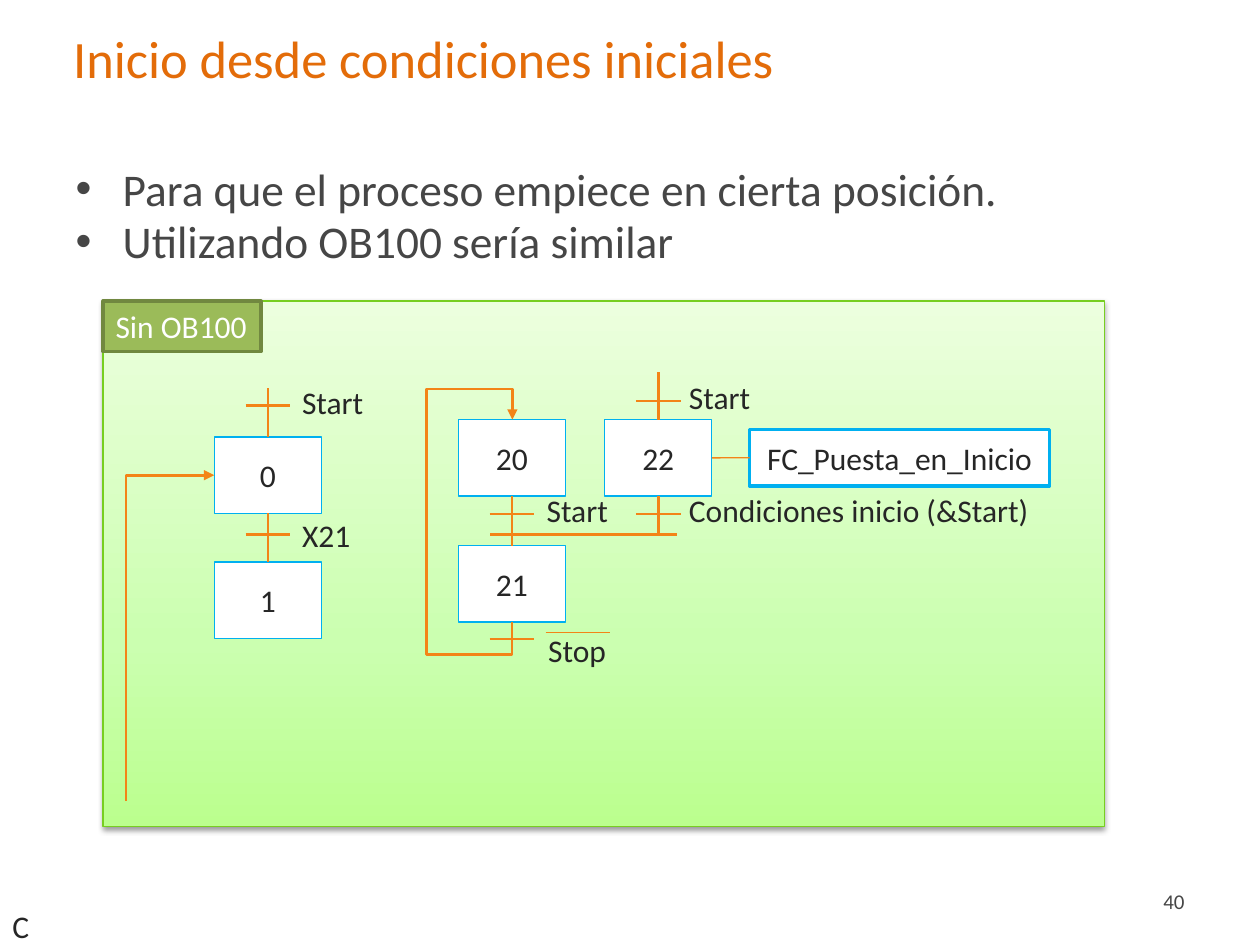
"""Build the slide on starting a process from its initial conditions."""
from copy import deepcopy

from lxml import etree
from pptx import Presentation, util as u
from pptx.dml.color import RGBColor
from pptx.enum import shapes, text
from pptx.oxml.ns import qn

TITLE = "Inicio desde condiciones iniciales"
ITEMS = ["Para que el proceso empiece en cierta posición.", "Utilizando OB100 sería similar"]
ORANGE, BLUE, DARK, GREY, WHITE = "F38417", "00B0F0", "262626", "464646", "FFFFFF"
GRAD = [(0, "BBFF8E"), (0.35, "CBFFB0"), (1, "ECFFDE")]
COL_A, COL_B, COL_C = 5.4, 10.32, 13.27
STEP_W, STEP_H, TICK = 2.16, 1.54, 0.9
STEPS = {"0": (COL_A, 8.81), "1": (COL_A, 11.33), "20": (COL_B, 8.46),
         "21": (COL_B, 11), "22": (COL_C, 8.46)}
LINKS = [("0", "1"), ("20", "21")]
STUBS = [("0", 0, COL_A, 7.82), ("22", 0, COL_C, 7.49), ("22", 2, COL_C, 10.77)]
TICKS = [(COL_A, 8.18), (COL_A, 10.77), (COL_B, 10.36), (COL_B, 12.88),
         (COL_C, 10.36), (COL_C, 8.08)]
BARS = [(9.88, 10.77, 13.64, 10.77, 1.5), (11, 12.75, 12.3, 12.75, 0.75)]
LABELS = [("Start", 5.84, 7.6, 1.75), ("X21", 5.84, 10.27, 1.5), ("Start", 10.77, 9.78, 1.75),
          ("Condiciones inicio (&Start)", 13.64, 9.78, 8.03), ("Stop", 10.8, 12.6, 1.7),
          ("Start", 13.64, 7.5, 1.75), ("C", 0, 18.16, 0.86)]


def rgb(code):
    """Turn a hex string into a colour."""
    return RGBColor.from_string(code)


def put(obj, vals):
    """Set every attribute named in a dict."""
    for key, val in vals.items():
        setattr(obj, key, val)


def place(obj, *box):
    """Move and size a shape in centimetres."""
    put(obj, dict(zip(("left", "top", "width", "height"), map(u.Cm, box))))


def write(par, words, size=18, color=DARK, align=text.PP_ALIGN.LEFT):
    """Add formatted words to a paragraph."""
    par.alignment = align
    run = par.add_run()
    run.text = words
    put(run.font, {"name": "Calibri", "size": u.Pt(size)})
    run.font.color.rgb = rgb(color)


def rect(slide, box, fill, edge, wide):
    """Draw a plain rectangle."""
    shp = slide.shapes.add_shape(shapes.MSO_SHAPE.RECTANGLE, *map(u.Cm, box))
    shp.shadow.inherit = False
    if fill:
        shp.fill.solid()
        shp.fill.fore_color.rgb = rgb(fill)
    shp.line.color.rgb = rgb(edge)
    shp.line.width = u.Pt(wide)
    return shp


def node(slide, words, box, wide=0.75):
    """Draw a white box with centred words."""
    shp = rect(slide, box, WHITE, BLUE, wide)
    put(shp.text_frame, {"word_wrap": True, "vertical_anchor": text.MSO_ANCHOR.MIDDLE})
    write(shp.text_frame.paragraphs[0], words, align=text.PP_ALIGN.CENTER)
    return shp


def label(slide, words, box, anchor=text.MSO_ANCHOR.TOP, **form):
    """Add a text box of one line."""
    frame = slide.shapes.add_textbox(*map(u.Cm, box)).text_frame
    put(frame, {"word_wrap": False, "vertical_anchor": anchor})
    write(frame.paragraphs[0], words, **form)


def line(slide, x, y, to_x, to_y, wide=1.5, kind=shapes.MSO_CONNECTOR.STRAIGHT):
    """Draw an orange connector without a shadow."""
    con = slide.shapes.add_connector(kind, *map(u.Cm, (x, y, to_x, to_y)))
    con.line.color.rgb = rgb(ORANGE)
    con.line.width = u.Pt(wide)
    etree.SubElement(con._element.spPr, qn("a:effectLst"))
    return con


def elbow(slide, preset, x, y, to_x, to_y, bends=()):
    """Draw a bent arrow that leaves upwards in its own turned frame."""
    con = line(slide, x, y, to_x, to_y, kind=shapes.MSO_CONNECTOR.ELBOW)
    run, rise = y - to_y, to_x - x
    props = con._element.spPr
    frame = props.find(qn("a:xfrm"))
    for key in ("flipV", "flipH"):
        frame.attrib.pop(key, None)
    frame.set("rot", "16200000")
    place(con, (x + to_x - run) / 2, (y + to_y - rise) / 2, run, rise)
    geom = props.find(qn("a:prstGeom"))
    geom.set("prst", preset)
    guides = geom.find(qn("a:avLst"))
    for num, (part, whole) in enumerate(bends, 1):
        etree.SubElement(guides, qn("a:gd"), name=f"adj{num}",
                         fmla=f"val {round(part / whole * 100000)}")
    etree.SubElement(props.find(qn("a:ln")), qn("a:tailEnd"), type="triangle")


def panel(slide):
    """Draw the green panel with its gradient and soft shadow."""
    shp = rect(slide, (2.08, 6.07, 20.19, 10.59), None, "77CE21", 0.75)
    shp.fill.gradient()
    shp.fill.gradient_angle = 90
    props = shp._element.spPr
    stops = props.find(qn("a:gradFill")).find(qn("a:gsLst"))
    stops.append(deepcopy(stops[-1]))
    for stop, (pos, code) in zip(shp.fill.gradient_stops, GRAD):
        stop.position = pos
        stop.color.rgb = rgb(code)
    shade = etree.SubElement(props.find(qn("a:effectLst")), qn("a:outerShdw"),
                             blurRad=str(u.Pt(3.1)), dist=str(u.Pt(1.6)),
                             dir="5400000", rotWithShape="0")
    black = etree.SubElement(shade, qn("a:srgbClr"), val="000000")
    etree.SubElement(black, qn("a:alpha"), val="38000")


def heads(slide):
    """Fill the title and the list."""
    title, body = slide.placeholders
    place(title, 1.22, 0.2, 23.34, 1.9)
    place(body, 1.27, 3.33, 23.29, 2.31)
    for shp in (title, body):
        shp.text_frame.auto_size = text.MSO_AUTO_SIZE.NONE
    title.text_frame.vertical_anchor = text.MSO_ANCHOR.MIDDLE
    write(title.text_frame.paragraphs[0], TITLE, 30, "E36C09")
    frame = body.text_frame
    for num, item in enumerate(ITEMS):
        par = frame.add_paragraph() if num else frame.paragraphs[0]
        props = par._p.get_or_add_pPr()
        put_in = {"marL": u.Cm(0.95), "indent": -u.Cm(0.95)}
        for key, val in put_in.items():
            props.set(key, str(val))
        tint = etree.SubElement(props, qn("a:buClr"))
        etree.SubElement(tint, qn("a:srgbClr"), val=GREY)
        etree.SubElement(props, qn("a:buFont"), typeface="Arial")
        etree.SubElement(props, qn("a:buChar"), char="•")
        put(par, {"line_spacing": 0.8, "space_before": u.Pt(5.2 if num else 0)})
        write(par, item, 25.9, GREY)


def main():
    """Build and save the slide."""
    deck = Presentation()
    put(deck, {"slide_width": u.Cm(25.4), "slide_height": u.Cm(19.05)})
    slide = deck.slides.add_slide(deck.slide_layouts[1])
    heads(slide)
    label(slide, "40", (18.21, 17.65, 5.92, 1.02), text.MSO_ANCHOR.MIDDLE,
          size=12, color=GREY, align=text.PP_ALIGN.RIGHT)
    panel(slide)
    tag = rect(slide, (2.08, 6.07, 3.18, 1.02), "9BBB59", "718840", 2)
    put(tag.text_frame, {"word_wrap": False, "vertical_anchor": text.MSO_ANCHOR.TOP})
    write(tag.text_frame.paragraphs[0], "Sin OB100", color=WHITE)
    nodes = {name: node(slide, name, (mid - STEP_W / 2, top, STEP_W, STEP_H))
             for name, (mid, top) in STEPS.items()}
    call = node(slide, "FC_Puesta_en_Inicio", (15.11, 8.66, 6.05, 1.14), 2)
    for top, low in LINKS:
        con = line(slide, 0, 0, 1, 1)
        con.begin_connect(nodes[low], 0)
        con.end_connect(nodes[top], 2)
    for name, side, x, y in STUBS:
        line(slide, x, y, x, y).begin_connect(nodes[name], side)
    con = line(slide, 0, 0, 1, 1, 0.75)
    con.begin_connect(call, 1)
    con.end_connect(nodes["22"], 3)
    for mid, y in TICKS:
        line(slide, mid - TICK / 2, y, mid + TICK / 2, y)
    for bar in BARS:
        line(slide, *bar)
    low, high = STEPS["21"][1] + STEP_H, STEPS["20"][1]
    span, slim = low - high, 0.01
    elbow(slide, "bentConnector5", COL_B, low, COL_B + slim, high,
          [(-0.65, span), (-1.72, slim), (span + 0.62, span)])
    mid, top = STEPS["0"]
    elbow(slide, "bentConnector2", 2.54, 16.15, mid - STEP_W / 2, top + STEP_H / 2)
    for words, x, y, wide in LABELS:
        label(slide, words, (x, y, wide, 1.02))
    deck.save("out.pptx")


if __name__ == "__main__":
    main()
